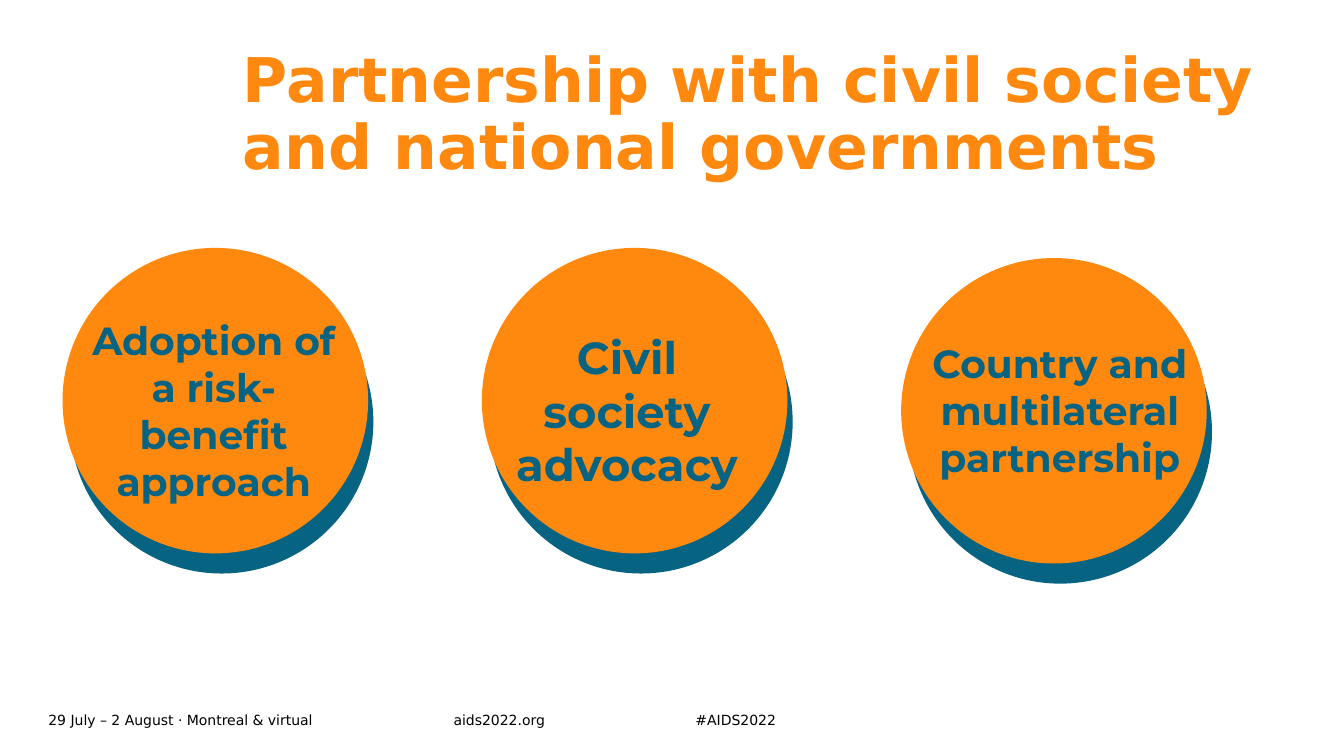
"""Build the slide on partnership with civil society and national governments."""
from dataclasses import dataclass

import pptx
import pptx.dml.color
import pptx.enum.shapes
import pptx.enum.text
import pptx.util

COLOURS = {"orange": "FF890E", "teal": "076382", "black": "000000"}
SLIDE_WIDTH = pptx.util.Inches(13.333)
SLIDE_HEIGHT = pptx.util.Inches(7.5)
DISC_LEFT, DISC_PITCH = 4.73, 31.2
DISC_WIDTH, DISC_HEIGHT = 22.58, 40.13
SHADE_RIGHT, SHADE_DOWN = 0.47, 2.8
LABEL_WIDTH = 21.45
FOOTER_TOP, FOOTER_HEIGHT = 93.6, 3.2


@dataclass(frozen=True)
class Partnership:
    label: str
    size: int
    top: float
    label_right: float
    label_down: float
    label_height: float


@dataclass(frozen=True)
class FooterItem:
    text: str
    left: float
    width: float


PARTNERSHIPS = [
    Partnership("Adoption of a risk-benefit approach", 28, 32.93, 0.45, 8.27, 26.53),
    Partnership("Civil society advocacy", 32, 32.93, 0, 10, 22.93),
    Partnership("Country and multilateral partnership", 28, 34.27, 1, 10, 20.13),
]
FOOTER = [
    FooterItem("29 July – 2 August · Montreal & virtual", 3.6, 30.15),
    FooterItem("aids2022.org", 33.75, 14.48),
    FooterItem("#AIDS2022", 51.75, 14.48),
]


def colour(name: str) -> pptx.dml.color.RGBColor:
    return pptx.dml.color.RGBColor.from_string(COLOURS[name])


def area(left: float, top: float, width: float, height: float) -> tuple[int, ...]:
    """Turn percentages of the slide's size into lengths."""
    return (
        round(SLIDE_WIDTH * left / 100),
        round(SLIDE_HEIGHT * top / 100),
        round(SLIDE_WIDTH * width / 100),
        round(SLIDE_HEIGHT * height / 100),
    )


def write(frame, text: str, face: str, size: int, tint: str, bold: bool = False):
    """Fill a text frame with one formatted paragraph and return it."""
    frame.word_wrap = True
    paragraph = frame.paragraphs[0]
    paragraph.text = text
    paragraph.font.name = face
    paragraph.font.size = pptx.util.Pt(size)
    paragraph.font.bold = bold
    paragraph.font.color.rgb = colour(tint)
    return paragraph


def remove_margins(frame) -> None:
    frame.margin_left = frame.margin_top = frame.margin_right = frame.margin_bottom = 0
    frame.vertical_anchor = pptx.enum.text.MSO_ANCHOR.MIDDLE


def draw_disc(shapes, left: float, top: float, tint: str, outlined: bool) -> None:
    disc = shapes.add_shape(
        pptx.enum.shapes.MSO_SHAPE.OVAL, *area(left, top, DISC_WIDTH, DISC_HEIGHT)
    )
    disc.shadow.inherit = False
    disc.fill.solid()
    disc.fill.fore_color.rgb = colour(tint)
    if outlined:
        disc.line.color.rgb = colour(tint)
        disc.line.width = pptx.util.Pt(1.5)
    else:
        disc.line.fill.background()


def draw_partnership(slide, column: int, item: Partnership) -> None:
    left = DISC_LEFT + column * DISC_PITCH
    shapes = slide.shapes.add_group_shape().shapes
    draw_disc(shapes, left + SHADE_RIGHT, item.top + SHADE_DOWN, "teal", False)
    draw_disc(shapes, left, item.top, "orange", True)
    label = shapes.add_textbox(
        *area(left + item.label_right, item.top + item.label_down,
              LABEL_WIDTH, item.label_height)
    )
    paragraph = write(label.text_frame, item.label, "Montserrat", item.size, "teal", True)
    paragraph.alignment = pptx.enum.text.PP_ALIGN.CENTER
    label.text_frame.auto_size = pptx.enum.text.MSO_AUTO_SIZE.SHAPE_TO_FIT_TEXT


def draw_footer(slide, item: FooterItem) -> None:
    note = slide.shapes.add_textbox(*area(item.left, FOOTER_TOP, item.width, FOOTER_HEIGHT))
    remove_margins(note.text_frame)
    write(note.text_frame, item.text, "DejaVu Sans", 10, "black")


def draw_title(slide) -> None:
    title = slide.shapes.title
    title.left, title.top, title.width, title.height = area(18.08, 6.4, 78.3, 17.87)
    remove_margins(title.text_frame)
    title.text_frame.auto_size = pptx.enum.text.MSO_AUTO_SIZE.NONE
    heading = write(
        title.text_frame, "Partnership with civil society and national governments",
        "DejaVu Sans", 44, "orange", True,
    )
    heading.alignment = pptx.enum.text.PP_ALIGN.LEFT
    heading.line_spacing = 0.9


def main() -> None:
    deck = pptx.Presentation()
    deck.slide_width, deck.slide_height = SLIDE_WIDTH, SLIDE_HEIGHT
    slide = deck.slides.add_slide(deck.slide_layouts.get_by_name("Title Only"))
    for item in FOOTER:
        draw_footer(slide, item)
    for column, item in enumerate(PARTNERSHIPS):
        draw_partnership(slide, column, item)
    draw_title(slide)
    deck.save("out.pptx")


if __name__ == "__main__":
    main()
